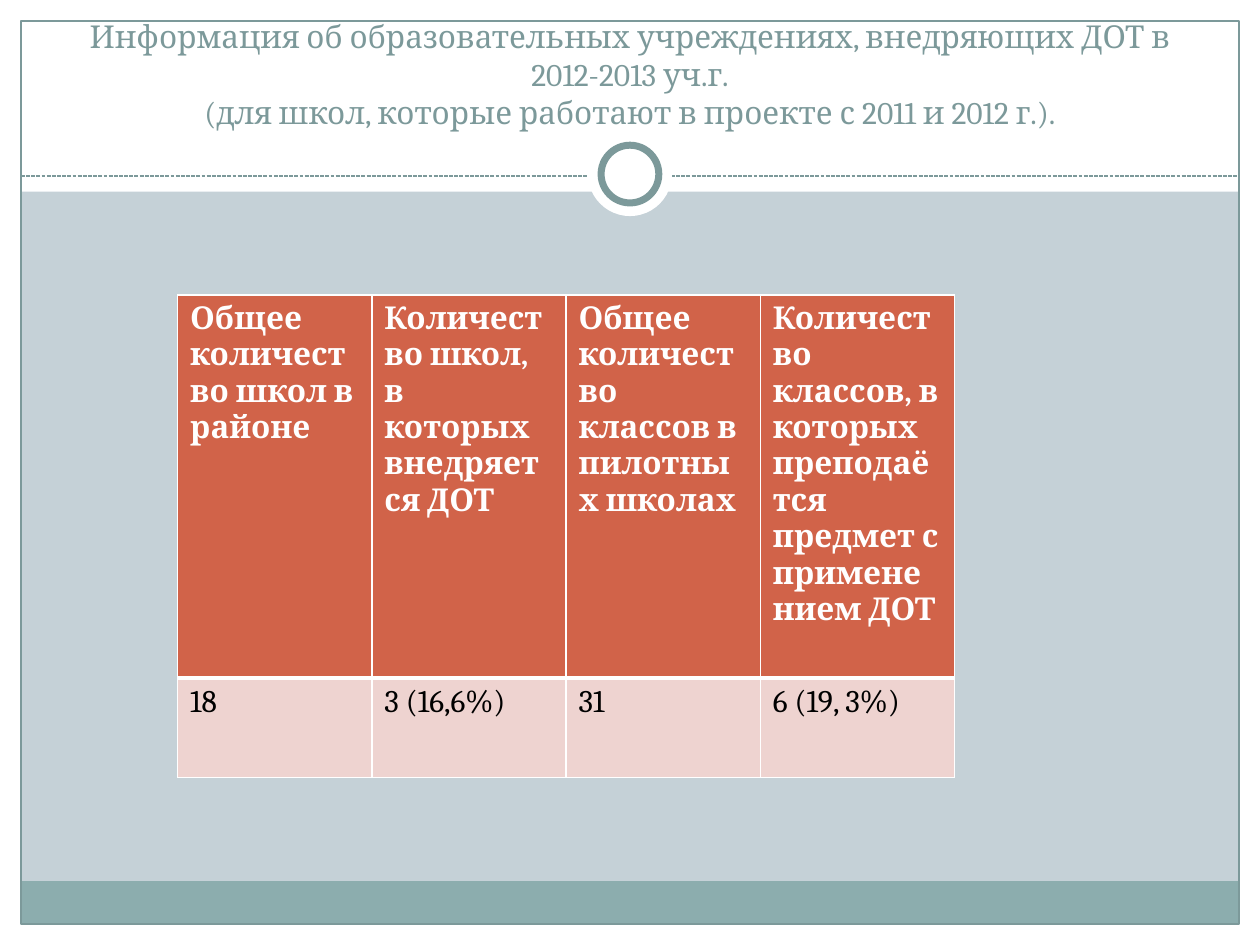
from lxml import etree
from pptx import Presentation
from pptx.dml.color import RGBColor
from pptx.enum import dml, shapes, text
from pptx.oxml import ns
from pptx.util import Pt

COLOURS = {
    "background": "C5D1D7",
    "white": "FFFFFF",
    "band": "8CADAE",
    "accent": "7C999A",
    "header": "D16349",
    "body": "EED3D0",
    "black": "000000",
}
WIDTH, HEIGHT, MARGIN = 720, 540, 12
INNER_WIDTH = WIDTH - 2 * MARGIN

TITLE = (
    "Информация об образовательных учреждениях, внедряющих ДОТ в 2012-2013 уч.г.\v"
    "(для школ, которые работают в проекте с 2011 и 2012 г.)."
)
ROWS = [
    [
        "Общее количество школ в районе",
        "Количество школ, в которых внедряется ДОТ",
        "Общее количество классов в пилотных школах",
        "Количество классов, в которых преподаётся предмет с применением ДОТ",
    ],
    ["18", "3 (16,6%)", "31", "6 (19, 3%)"],
]


class SlideBuilder:
    font = "Cambria"
    size = 18

    def __init__(self, page):
        self.page = page

    def colour(self, name):
        return RGBColor.from_string(COLOURS[name])

    def background(self, name):
        fill = self.page.background.fill
        fill.solid()
        fill.fore_color.rgb = self.colour(name)

    def shape(self, kind, bounds, fill=None, line=None, weight=0.75):
        shape = self.page.shapes.add_shape(kind, *map(Pt, bounds))
        shape.shadow.inherit = False
        if fill:
            shape.fill.solid()
            shape.fill.fore_color.rgb = self.colour(fill)
        else:
            shape.fill.background()
        if line:
            shape.line.color.rgb = self.colour(line)
            shape.line.width = Pt(weight)
        else:
            shape.line.fill.background()

    def rectangle(self, *bounds, **style):
        self.shape(shapes.MSO_SHAPE.RECTANGLE, bounds, **style)

    def circle(self, x, y, diameter, **style):
        bounds = (x - diameter / 2, y - diameter / 2, diameter, diameter)
        self.shape(shapes.MSO_SHAPE.OVAL, bounds, **style)

    def dashed_line(self, x1, y1, x2, y2, colour):
        line = self.page.shapes.add_connector(
            shapes.MSO_CONNECTOR.STRAIGHT, *map(Pt, (x1, y1, x2, y2))
        )
        line.line.color.rgb = self.colour(colour)
        line.line.width = Pt(0.75)
        line.line.dash_style = dml.MSO_LINE.SQUARE_DOT
        etree.SubElement(line.element.spPr, ns.qn("a:effectLst"))

    def format_text(self, frame, colour, bold=False):
        for para in frame.paragraphs:
            for span in para.runs:
                span.font.name = self.font
                span.font.size = Pt(self.size)
                span.font.bold = bold
                span.font.color.rgb = self.colour(colour)

    def title(self, bounds, words, colour):
        frame = self.page.shapes.add_textbox(*map(Pt, bounds)).text_frame
        frame.word_wrap = True
        frame.vertical_anchor = text.MSO_ANCHOR.BOTTOM
        frame.text = words
        frame.paragraphs[0].alignment = text.PP_ALIGN.CENTER
        self.format_text(frame, colour)

    def borders(self, cell, colour, widths):
        properties = cell._tc.get_or_add_tcPr()
        for index, (side, width) in enumerate(zip("LRTB", widths)):
            border = etree.Element(ns.qn(f"a:ln{side}"), w=str(Pt(width)))
            fill = etree.SubElement(border, ns.qn("a:solidFill"))
            etree.SubElement(fill, ns.qn("a:srgbClr"), val=COLOURS[colour])
            properties.insert(index, border)

    def table(self, x, y, column_width, row_heights, rows):
        columns = len(rows[0])
        bounds = (x, y, column_width * columns, sum(row_heights))
        table = self.page.shapes.add_table(
            len(rows), columns, *map(Pt, bounds)
        ).table
        for column in table.columns:
            column.width = Pt(column_width)
        for index, (height, words) in enumerate(zip(row_heights, rows)):
            header = index == 0
            table.rows[index].height = Pt(height)
            for cell, content in zip(table.rows[index].cells, words):
                cell.text_frame.text = content
                self.format_text(
                    cell.text_frame, "white" if header else "black", header
                )
                cell.fill.solid()
                cell.fill.fore_color.rgb = self.colour("header" if header else "body")
                self.borders(cell, "white", (1, 1, 1, 3) if header else (1, 1, 3, 1))


def main():
    deck = Presentation()
    deck.slide_width, deck.slide_height = Pt(WIDTH), Pt(HEIGHT)
    builder = SlideBuilder(deck.slides.add_slide(deck.slide_layouts[6]))

    builder.background("background")
    for bounds in (
        (0, HEIGHT - MARGIN, WIDTH, MARGIN),
        (0, 0, WIDTH, 109.5),
        (0, 0, MARGIN, HEIGHT),
        (WIDTH - MARGIN, 0, MARGIN, HEIGHT),
    ):
        builder.rectangle(*bounds, fill="white")
    builder.rectangle(MARGIN, 503.5, INNER_WIDTH, 24.5, fill="band")
    builder.rectangle(
        MARGIN, MARGIN, INNER_WIDTH, HEIGHT - 2 * MARGIN, line="accent"
    )
    builder.dashed_line(MARGIN, 100.6, WIDTH - MARGIN, 100.6, "accent")
    builder.circle(WIDTH / 2, 99.5, 48, fill="white")
    builder.circle(WIDTH / 2, 99.5, 33, fill="white", line="accent", weight=4)
    builder.title((24, 18, 672, 60), TITLE, "accent")
    builder.table(101.5, 168.5, 111, (218.9, 56.9), ROWS)

    deck.save("out.pptx")


if __name__ == "__main__":
    main()
